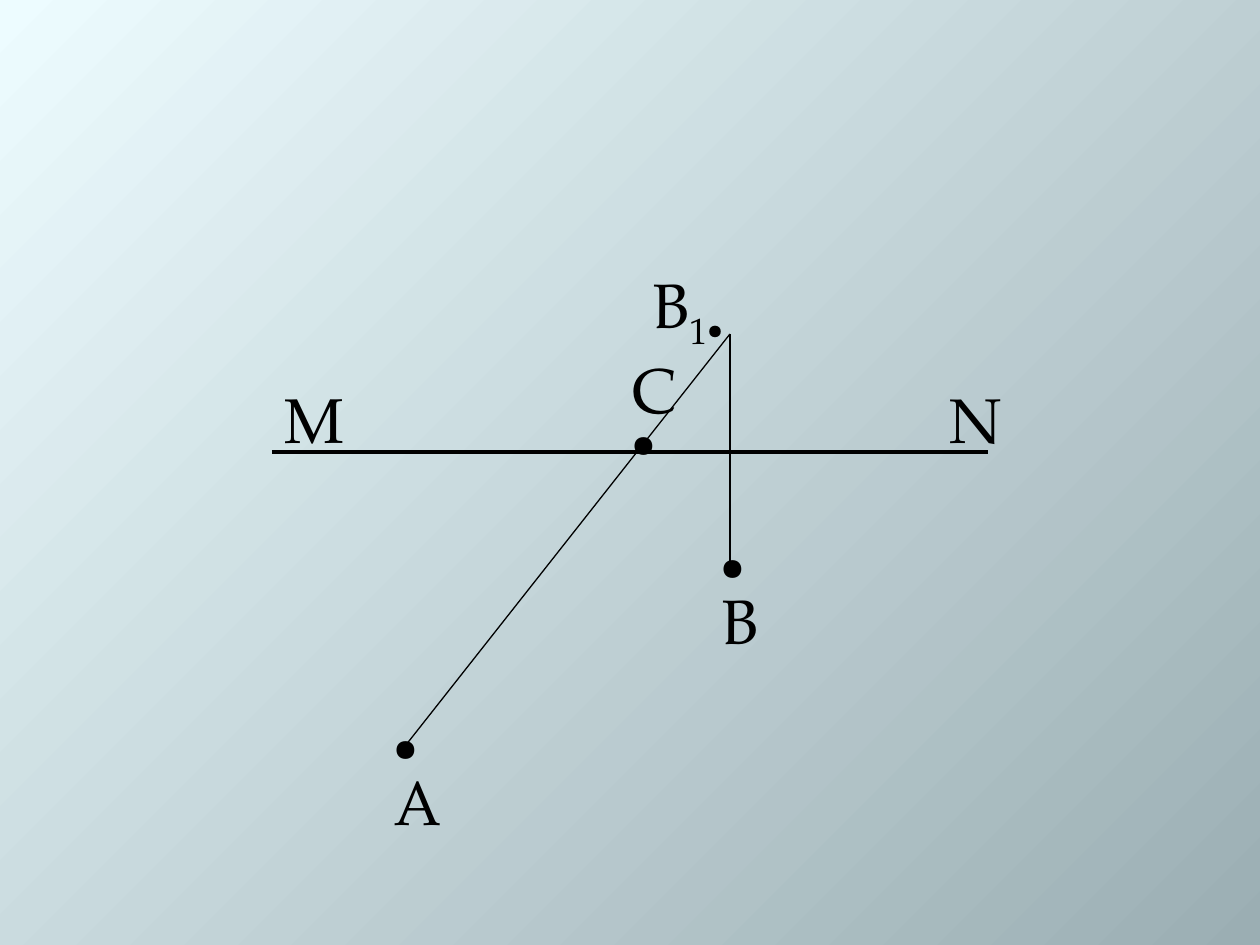
from dataclasses import dataclass

from lxml import etree
from pptx import Presentation
from pptx import util as u
from pptx.dml.color import RGBColor
from pptx.enum import shapes, text
from pptx.oxml import ns

EMU_PER_PX = 914400 / 126
COLORS = {"ink": "000000", "light": "EDFCFF", "dark": "9BAEB3"}
FONT = "TeX Gyre Pagella"
DOT = "●"
LEFT, JUSTIFY = text.PP_ALIGN.LEFT, text.PP_ALIGN.JUSTIFY


@dataclass
class Span:
    words: str
    size: int = 36
    subscript: bool = False


@dataclass
class Label:
    left: int
    top: int
    width: int
    height: int
    lines: list[list[Span]]
    align: text.PP_ALIGN = LEFT


@dataclass
class Segment:
    start: tuple[int, int]
    end: tuple[int, int]
    weight: float = 0.75


def px(length: int) -> u.Emu:
    return u.Emu(round(length * EMU_PER_PX))


def color(name: str) -> RGBColor:
    return RGBColor.from_string(COLORS[name])


def paint_background(page) -> None:
    fill = page.background.fill
    fill.gradient()
    fill.gradient_angle = 315
    for stop, name in zip(fill.gradient_stops, ("light", "dark")):
        stop.color.rgb = color(name)


def draw_segment(page, segment: Segment) -> None:
    ends = [px(value) for value in segment.start + segment.end]
    line = page.shapes.add_connector(shapes.MSO_CONNECTOR.STRAIGHT, *ends)
    line.line.color.rgb = color("ink")
    line.line.width = u.Pt(segment.weight)
    etree.SubElement(line._element.spPr, ns.qn("a:effectLst"))


def draw_label(page, label: Label) -> None:
    box = page.shapes.add_textbox(px(label.left), px(label.top),
                                  px(label.width), px(label.height))
    frame = box.text_frame
    frame.word_wrap = True
    frame.vertical_anchor = text.MSO_ANCHOR.MIDDLE
    for index, spans in enumerate(label.lines):
        para = frame.add_paragraph() if index else frame.paragraphs[0]
        para.alignment = label.align
        for span in spans:
            run = para.add_run()
            run.text = span.words
            run.font.name = FONT
            run.font.size = u.Pt(span.size)
            run.font.color.rgb = color("ink")
            if span.subscript:
                run._r.get_or_add_rPr().set("baseline", "-25000")


# Mirror line MN, perpendicular through B, and path from A to the reflection
REFLECTION = (730, 334)
SEGMENTS = [
    Segment((272, 452), (988, 452), 2.25),
    Segment(REFLECTION, (730, 572)),
    Segment((402, 750), REFLECTION),
]

# Point names, with a dot above or below where the point is marked
SMALL_DOT = [Span(DOT, 16)]
LABELS = [
    Label(640, 265, 110, 88,
          [[Span("В"), Span("1", subscript=True), Span(DOT, 18, True)]]),
    Label(272, 374, 87, 88, [[Span("M")]]),
    Label(937, 374, 88, 88, [[Span("N")]]),
    Label(709, 542, 84, 122, [SMALL_DOT, [Span("В")]]),
    Label(382, 723, 84, 122, [SMALL_DOT, [Span("А")]]),
    Label(620, 344, 100, 122, [[Span("C")], SMALL_DOT], JUSTIFY),
]


def main() -> None:
    deck = Presentation()
    deck.slide_width, deck.slide_height = px(1260), px(945)
    page = deck.slides.add_slide(deck.slide_layouts[6])
    paint_background(page)
    for segment in SEGMENTS:
        draw_segment(page, segment)
    for label in LABELS:
        draw_label(page, label)
    deck.save("out.pptx")


if __name__ == "__main__":
    main()
